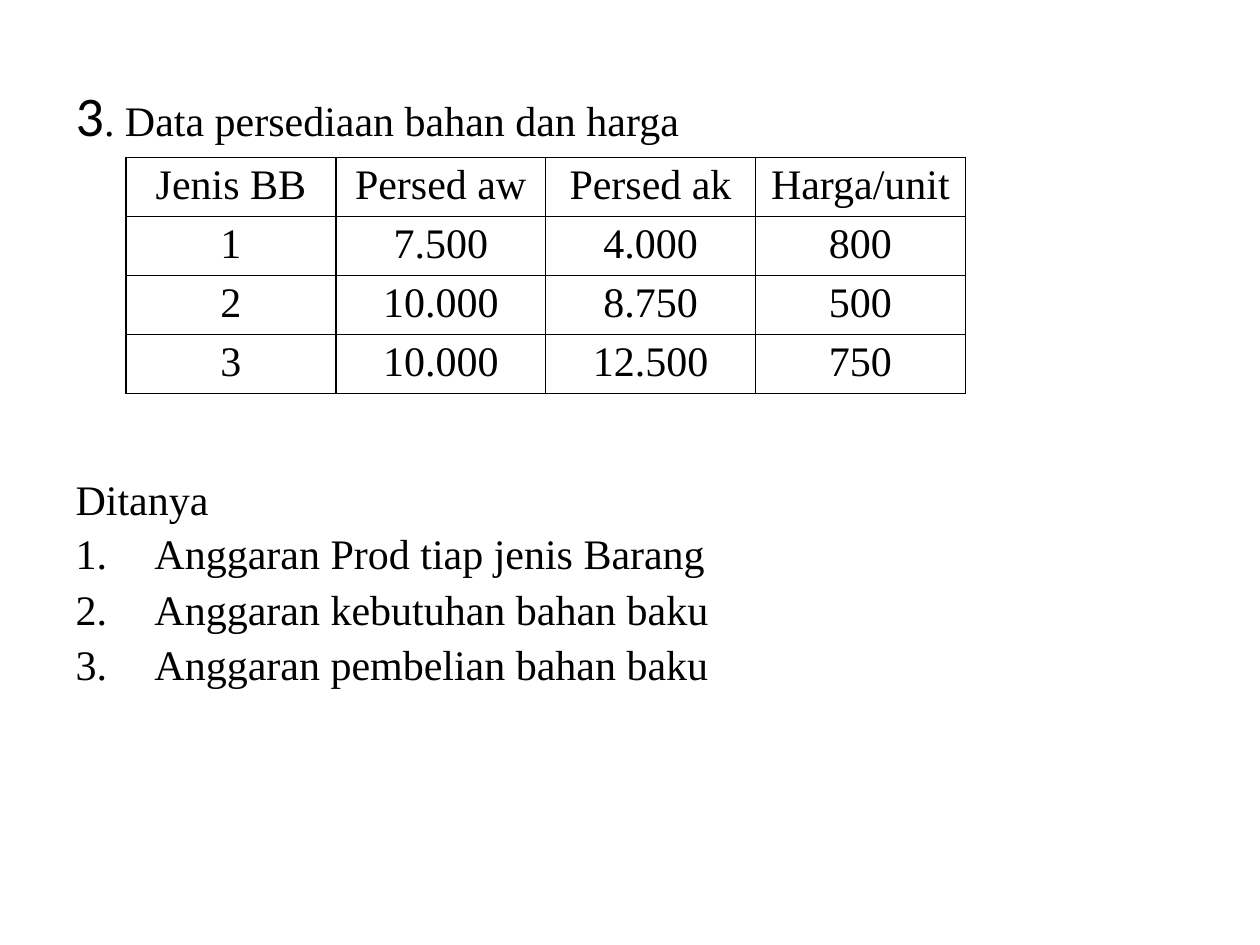
from lxml.etree import SubElement
from pptx import Presentation
from pptx.dml.color import RGBColor
from pptx.enum.text import MSO_ANCHOR, MSO_AUTO_SIZE, PP_ALIGN
from pptx.oxml.ns import qn
from pptx.util import Cm, Pt

COLORS = {"text": "000000", "border": "000000"}
SERIF = "Times New Roman"


def add_run(paragraph, text, size=24, font=SERIF):
    run = paragraph.add_run()
    run.text = text
    run.font.size = Pt(size)
    run.font.name = font
    run.font.color.rgb = RGBColor.from_string(COLORS["text"])


def set_indent(paragraph, hanging, numbered=False):
    properties = paragraph._p.get_or_add_pPr()
    properties.set("marL", str(hanging))
    properties.set("indent", str(-hanging))
    if numbered:
        font = SubElement(properties, qn("a:buFont"))
        font.set("typeface", SERIF)
        SubElement(properties, qn("a:buAutoNum")).set("type", "arabicPeriod")
    else:
        SubElement(properties, qn("a:buNone"))


presentation = Presentation()
presentation.slide_width, presentation.slide_height = Cm(25.4), Cm(19.05)
slide = presentation.slides.add_slide(presentation.slide_layouts[1])
title = slide.shapes.title
title.element.getparent().remove(title.element)

# Body: heading, then the questions below the table
body = slide.placeholders[1]
body.left, body.top, body.width, body.height = Cm(1.27), Cm(1.5), Cm(22.86), Cm(15.5)
frame = body.text_frame
frame.auto_size = MSO_AUTO_SIZE.NONE
frame.vertical_anchor = MSO_ANCHOR.TOP

heading = frame.paragraphs[0]
set_indent(heading, Cm(0.95))
heading.space_before = Pt(0)
add_run(heading, "3", 32, "Calibri")
add_run(heading, ". Data persediaan bahan dan harga")

asked = frame.add_paragraph()
set_indent(asked, Cm(0.95))
asked.space_before = Pt(186)
add_run(asked, "Ditanya")

for question in (
    "Anggaran Prod tiap jenis Barang",
    "Anggaran kebutuhan bahan baku",
    "Anggaran pembelian bahan baku",
):
    paragraph = frame.add_paragraph()
    set_indent(paragraph, Cm(1.59), numbered=True)
    paragraph.line_spacing = 0.9
    paragraph.space_before = Pt(5.6)
    add_run(paragraph, question)

# Table of stock and prices
rows = [
    ("Jenis BB", "Persed aw", "Persed ak", "Harga/unit"),
    ("1", "7.500", "4.000", "800"),
    ("2", "10.000", "8.750", "500"),
    ("3", "10.000", "12.500", "750"),
]
column_width, row_height = Cm(4.23), Cm(1.19)
table = slide.shapes.add_table(
    len(rows), len(rows[0]), Cm(2.54), Cm(3.17),
    column_width * len(rows[0]), row_height * len(rows),
).table
table.first_row = table.horz_banding = False
for column in table.columns:
    column.width = column_width

for row_index, values in enumerate(rows):
    table.rows[row_index].height = row_height
    for column_index, value in enumerate(values):
        cell = table.cell(row_index, column_index)
        cell.margin_top = cell.margin_bottom = Cm(0.1)
        cell.margin_left = cell.margin_right = Cm(0.2)
        paragraph = cell.text_frame.paragraphs[0]
        paragraph.alignment = PP_ALIGN.CENTER
        add_run(paragraph, value)
        # Borders come before the fill in the cell properties
        properties = cell._tc.get_or_add_tcPr()
        for side in ("lnL", "lnR", "lnT", "lnB"):
            line = SubElement(properties, qn(f"a:{side}"), w=str(Pt(1)))
            fill = SubElement(line, qn("a:solidFill"))
            SubElement(fill, qn("a:srgbClr"), val=COLORS["border"])
        cell.fill.background()

presentation.save("out.pptx")
